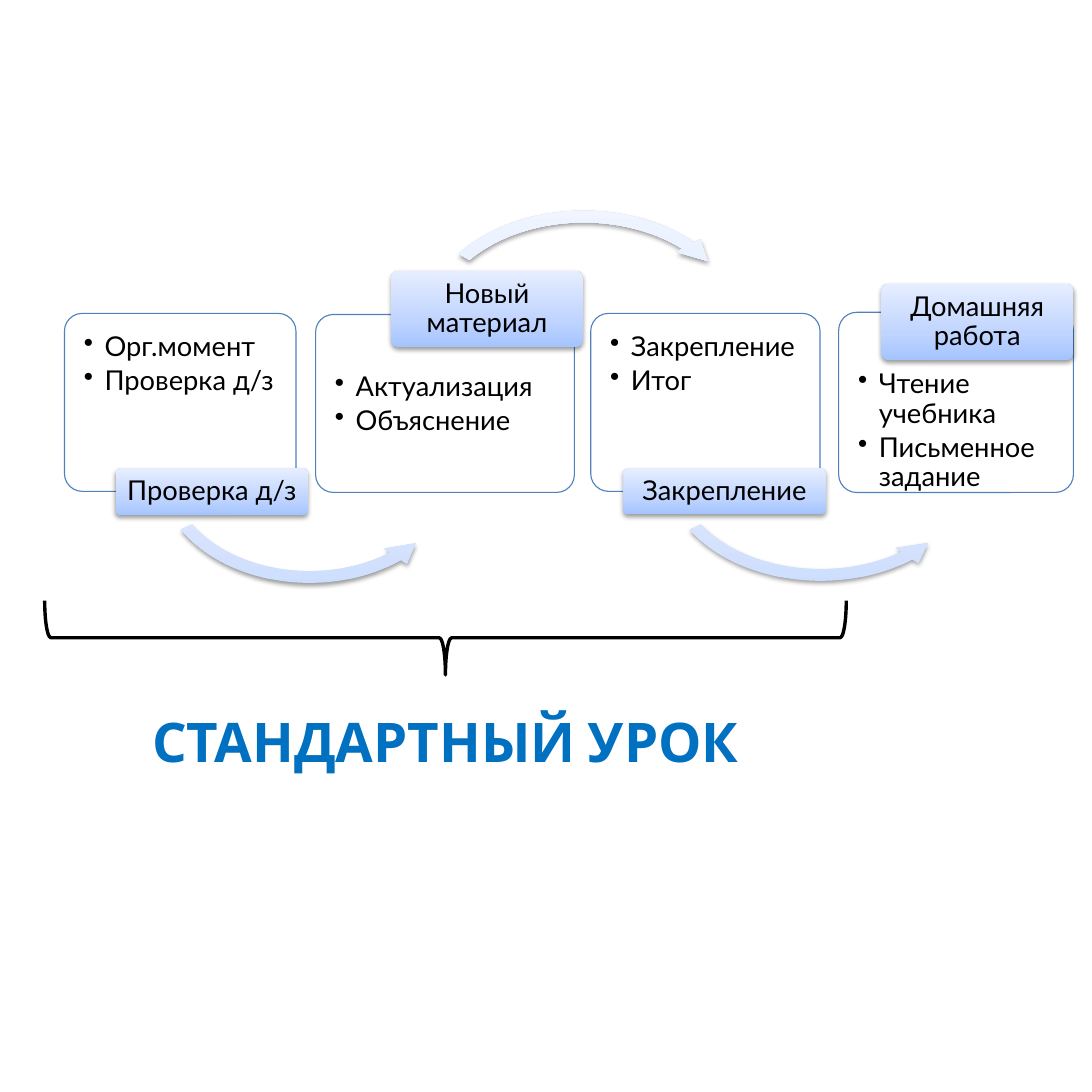
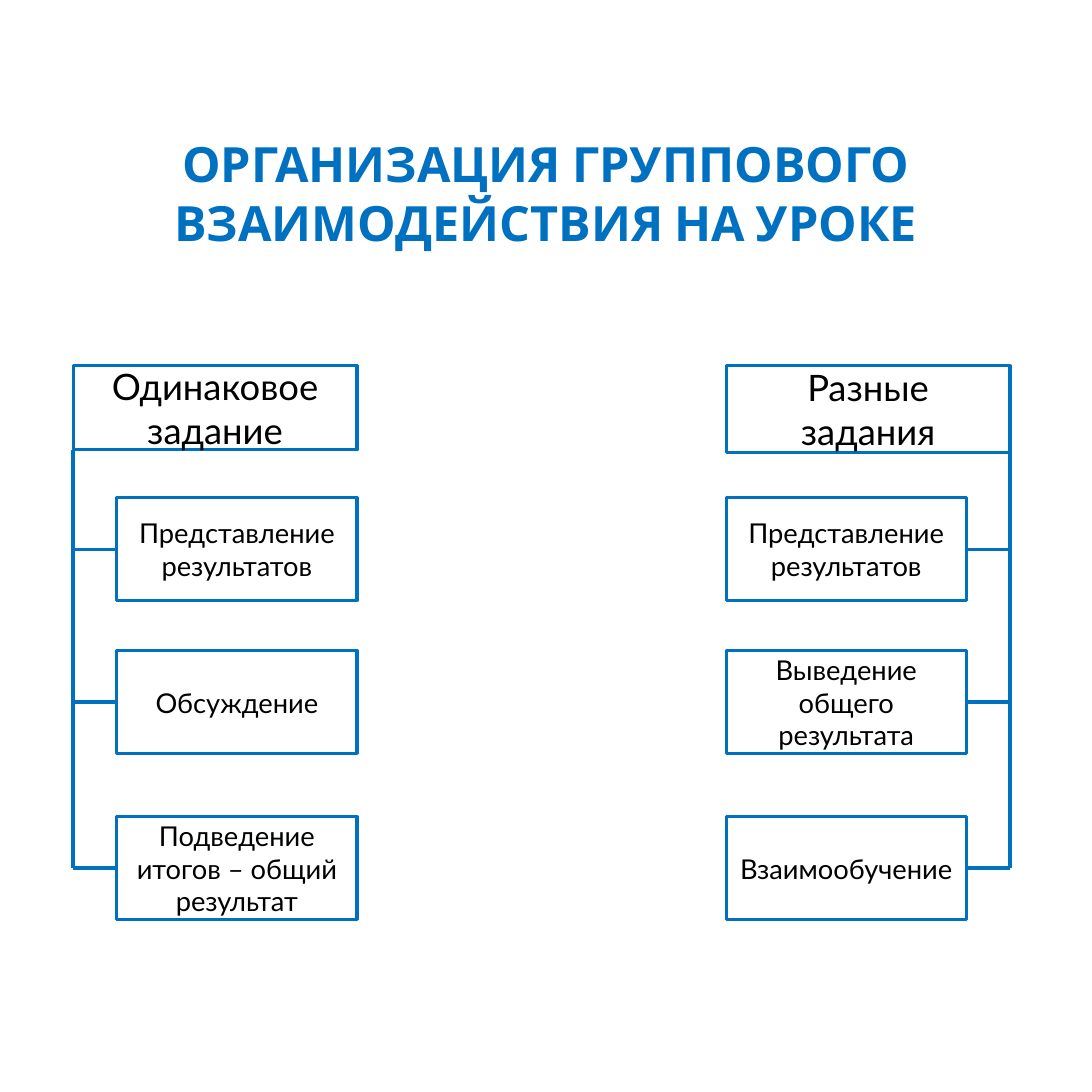
from dataclasses import dataclass

from pptx import Presentation
from pptx.dml.color import RGBColor
from pptx.enum.shapes import MSO_CONNECTOR, MSO_SHAPE
from pptx.enum.text import MSO_ANCHOR, PP_ALIGN
from pptx.oxml import parse_xml
from pptx.oxml.ns import nsdecls, qn
from pptx.util import Inches, Pt

SIDE = Inches(10)
COLUMNS = 10


@dataclass(frozen=True)
class Theme:
    """Colours, fonts and type sizes shared by the slides."""
    accent: str = "0070C0"
    ink: str = "000000"
    paper: str = "FFFFFF"
    card_line: str = "4F81BD"
    label_stops: tuple = ("A4C4FF", "BFD4FF", "E6EEFF")
    arrow_stops: tuple = ("CDDDFE", "DBE6FE", "F0F5FF")
    title_font: str = "Cabin"
    body_font: str = "Lato"
    lesson_title: int = 36
    topic_title: int = 32
    heading: int = 24
    body: int = 18


@dataclass(frozen=True)
class Box:
    """A rectangle in columns and rows of the slide grid."""
    left: float
    top: float
    width: float
    height: float

    @property
    def right(self):
        """Return the right edge."""
        return self.left + self.width

    @property
    def bottom(self):
        """Return the bottom edge."""
        return self.top + self.height

    @property
    def middle(self):
        """Return the row halfway down."""
        return self.top + self.height / 2

    def emu(self):
        """Return the four lengths for python-pptx."""
        return [grid(n) for n in (self.left, self.top, self.width, self.height)]


@dataclass(frozen=True)
class Stage:
    """A lesson stage: card, bullets, label and outgoing arrow."""
    card: Box
    bullets: tuple
    label: str
    label_size: tuple
    overhang: float
    label_drop: float
    text_drop: float = 0
    arrow: tuple = ()


THEME = Theme()
LEFT_SWEEP = (MSO_SHAPE.LEFT_CIRCULAR_ARROW, (0.049, 6.25, 26.93, 93.17, 0.057))
RIGHT_SWEEP = (MSO_SHAPE.CIRCULAR_ARROW, (0.047, 5.96, 193, 126.47, 0.054))
STAGES = (
    Stage(Box(0.59, 2.87, 2.12, 1.63), ("Орг.момент", "Проверка д/з"),
          "Проверка д/з", (1.76, 0.43), 0.11, 1.42,
          arrow=(LEFT_SWEEP, 0.79, 0.34, 2.91, 2.2)),
    Stage(Box(2.89, 2.88, 2.37, 1.63), ("Актуализация", "Объяснение"),
          "Новый материал", (1.76, 0.7), 0.08, -0.4, 0.36,
          (RIGHT_SWEEP, 0.91, -1.02, 3.09, 2.29)),
    Stage(Box(5.41, 2.87, 2.1, 1.63), ("Закрепление", "Итог"),
          "Закрепление", (1.85, 0.42), 0.05, 1.42,
          arrow=(LEFT_SWEEP, 0.61, 0.34, 2.99, 2.18)),
    Stage(Box(7.68, 2.86, 2.15, 1.65), ("Чтение учебника", "Письменное задание"),
          "Домашняя работа", (1.76, 0.7), 0, -0.26, 0.35),
)


def grid(n):
    """Convert grid units to EMU."""
    return int(SIDE * n / COLUMNS)


def color(code):
    """Return a colour from its hex code."""
    return RGBColor.from_string(code)


def write(paragraph, text, size, font=THEME.body_font, ink=THEME.ink, bold=False):
    """Add text run by run, breaking at newlines."""
    for index, line in enumerate(text.split("\n")):
        if index:
            paragraph.add_line_break()
        run = paragraph.add_run()
        run.text = line
        run.font.size, run.font.name, run.font.bold = Pt(size), font, bold
        run.font.color.rgb = color(ink)


def set_insets(frame, left, top, right, bottom):
    """Set the four text insets in grid units."""
    frame.margin_left, frame.margin_top = grid(left), grid(top)
    frame.margin_right, frame.margin_bottom = grid(right), grid(bottom)


def centre(frame, text, size):
    """Write one paragraph in the centre of a frame and return it."""
    frame.word_wrap = True
    frame.vertical_anchor = MSO_ANCHOR.MIDDLE
    paragraph = frame.paragraphs[0]
    paragraph.alignment = PP_ALIGN.CENTER
    write(paragraph, text, size)
    return paragraph


def add_title(slide, box, text, size):
    """Add a bold centred title."""
    frame = slide.shapes.add_textbox(*box.emu()).text_frame
    frame.word_wrap = True
    paragraph = frame.paragraphs[0]
    paragraph.alignment = PP_ALIGN.CENTER
    write(paragraph, text, size, THEME.title_font, THEME.accent, True)


def add_panel(slide, kind, box, line, weight):
    """Add a white outlined shape."""
    panel = slide.shapes.add_shape(kind, *box.emu())
    panel.shadow.inherit = False
    panel.fill.solid()
    panel.fill.fore_color.rgb = color(THEME.paper)
    panel.line.color.rgb = color(line)
    panel.line.width = Pt(weight)
    return panel


def add_glossy(slide, kind, box, adjustments, stops):
    """Add a borderless shape with an upward gradient and a soft shadow."""
    glossy = slide.shapes.add_shape(kind, *box.emu())
    for index, value in enumerate(adjustments):
        glossy.adjustments[index] = value
    glossy.line.fill.background()
    glossy.shadow.inherit = False
    marks = "".join(f'<a:gs pos="{pos}"><a:srgbClr val="{stop}"/></a:gs>'
                    for pos, stop in zip((0, 35000, 100000), stops))
    properties = glossy.element.spPr
    properties.find(qn("a:prstGeom")).addnext(parse_xml(
        f'<a:gradFill {nsdecls("a")} rotWithShape="1"><a:gsLst>{marks}</a:gsLst>'
        '<a:lin ang="16200000" scaled="0"/></a:gradFill>'))
    properties.find(qn("a:effectLst")).append(parse_xml(
        f'<a:outerShdw {nsdecls("a")} blurRad="40000" dist="20000" dir="5400000" '
        f'rotWithShape="0"><a:srgbClr val="{THEME.ink}"><a:alpha val="38000"/>'
        '</a:srgbClr></a:outerShdw>'))
    return glossy


def add_bullet(paragraph, text):
    """Write a bulleted line with a hanging indent."""
    properties = paragraph._p.get_or_add_pPr()
    properties.set("marL", str(grid(0.19)))
    properties.set("indent", str(-grid(0.19)))
    properties.append(parse_xml(f'<a:buChar {nsdecls("a")} char="•"/>'))
    paragraph.alignment = PP_ALIGN.LEFT
    paragraph.line_spacing = 0.9
    paragraph.space_after = Pt(3)
    write(paragraph, text, THEME.body)


def add_stage(slide, stage):
    """Place a stage's card, arrow and label relative to the card box."""
    box = stage.card
    card = add_panel(slide, MSO_SHAPE.ROUNDED_RECTANGLE, box, THEME.card_line, 0.75)
    card.adjustments[0] = 0.1
    frame = card.text_frame
    frame.word_wrap = True
    frame.vertical_anchor = MSO_ANCHOR.TOP
    set_insets(frame, 0.13, 0.13 + stage.text_drop, 0.1, 0)
    for index, text in enumerate(stage.bullets):
        add_bullet(frame.add_paragraph() if index else frame.paragraphs[0], text)

    if stage.arrow:
        (kind, adjustments), right, down, width, height = stage.arrow
        add_glossy(slide, kind, Box(box.left + right, box.top + down, width, height),
                   adjustments, THEME.arrow_stops)

    width, height = stage.label_size
    label_box = Box(box.right + stage.overhang - width, box.top + stage.label_drop,
                    width, height)
    label = add_glossy(slide, MSO_SHAPE.ROUNDED_RECTANGLE, label_box, (0.1,),
                       THEME.label_stops)
    set_insets(label.text_frame, 0.04, 0.03, 0.04, 0.03)
    centre(label.text_frame, stage.label, THEME.body).line_spacing = 0.9


def add_brace(slide, box):
    """Add a brace that spans the box and points down."""
    upright = Box(box.left + (box.width - box.height) / 2,
                  box.middle - box.width / 2, box.height, box.width)
    brace = slide.shapes.add_shape(MSO_SHAPE.LEFT_BRACE, *upright.emu())
    brace.rotation = 270
    brace.shadow.inherit = False
    brace.fill.background()
    brace.line.color.rgb = color(THEME.ink)
    brace.line.width = Pt(2.25)


def add_link(slide, x1, y1, x2, y2):
    """Draw a straight tree line."""
    link = slide.shapes.add_connector(MSO_CONNECTOR.STRAIGHT,
                                      *map(grid, (x1, y1, x2, y2)))
    link.line.color.rgb = color(THEME.accent)
    link.line.width = Pt(2.25)
    link.element.spPr.append(parse_xml(f'<a:effectLst {nsdecls("a")}/>'))


def add_branch(slide, box, heading, heading_height, steps, spine_left):
    """Place a heading, its steps and the tree lines inside the box."""
    indent, step_height = 0.4, 0.94
    head = Box(box.left, box.top, box.width, heading_height)
    step_left = box.left + indent if spine_left else box.left
    spine = box.left if spine_left else box.right
    tops = (1.21, 2.61, box.height - step_height)
    step_boxes = [Box(step_left, box.top + top, box.width - indent, step_height)
                  for top in tops]
    texts = [(head, heading, THEME.heading)]
    texts += [(step, text, THEME.body) for step, text in zip(step_boxes, steps)]
    for place, text, size in texts:
        panel = add_panel(slide, MSO_SHAPE.RECTANGLE, place, THEME.accent, 2)
        centre(panel.text_frame, text, size)
    add_link(slide, spine, head.bottom, spine, step_boxes[-1].middle)
    for step in step_boxes:
        edge = step.left if spine_left else step.right
        add_link(slide, edge, step.middle, spine, step.middle)


def build_lesson(slide):
    """Build the standard lesson flow."""
    for stage in STAGES:
        add_stage(slide, stage)
    add_brace(slide, Box(0.41, 5.5, 7.34, 0.68))
    add_title(slide, Box(0.41, 6.43, 7.34, 0.71), "СТАНДАРТНЫЙ УРОК",
              THEME.lesson_title)


def build_group_work(slide):
    """Build the two trees of group work."""
    add_title(slide, Box(0, 1.18, COLUMNS, 1.18),
              "ОРГАНИЗАЦИЯ ГРУППОВОГО ВЗАИМОДЕЙСТВИЯ НА УРОКЕ", THEME.topic_title)
    add_branch(slide, Box(0.67, 3.35, 2.6, 5.07), "Одинаковое задание", 0.77,
               ("Представление результатов", "Обсуждение",
                "Подведение итогов – общий результат"), True)
    add_branch(slide, Box(6.65, 3.35, 2.6, 5.07), "Разные\nзадания", 0.79,
               ("Представление результатов", "Выведение общего результата",
                "Взаимообучение"), False)


def main():
    """Build and save the presentation."""
    deck = Presentation()
    deck.slide_width = deck.slide_height = SIDE
    for build in (build_lesson, build_group_work):
        build(deck.slides.add_slide(deck.slide_layouts[6]))
    deck.save("out.pptx")


if __name__ == "__main__":
    main()
